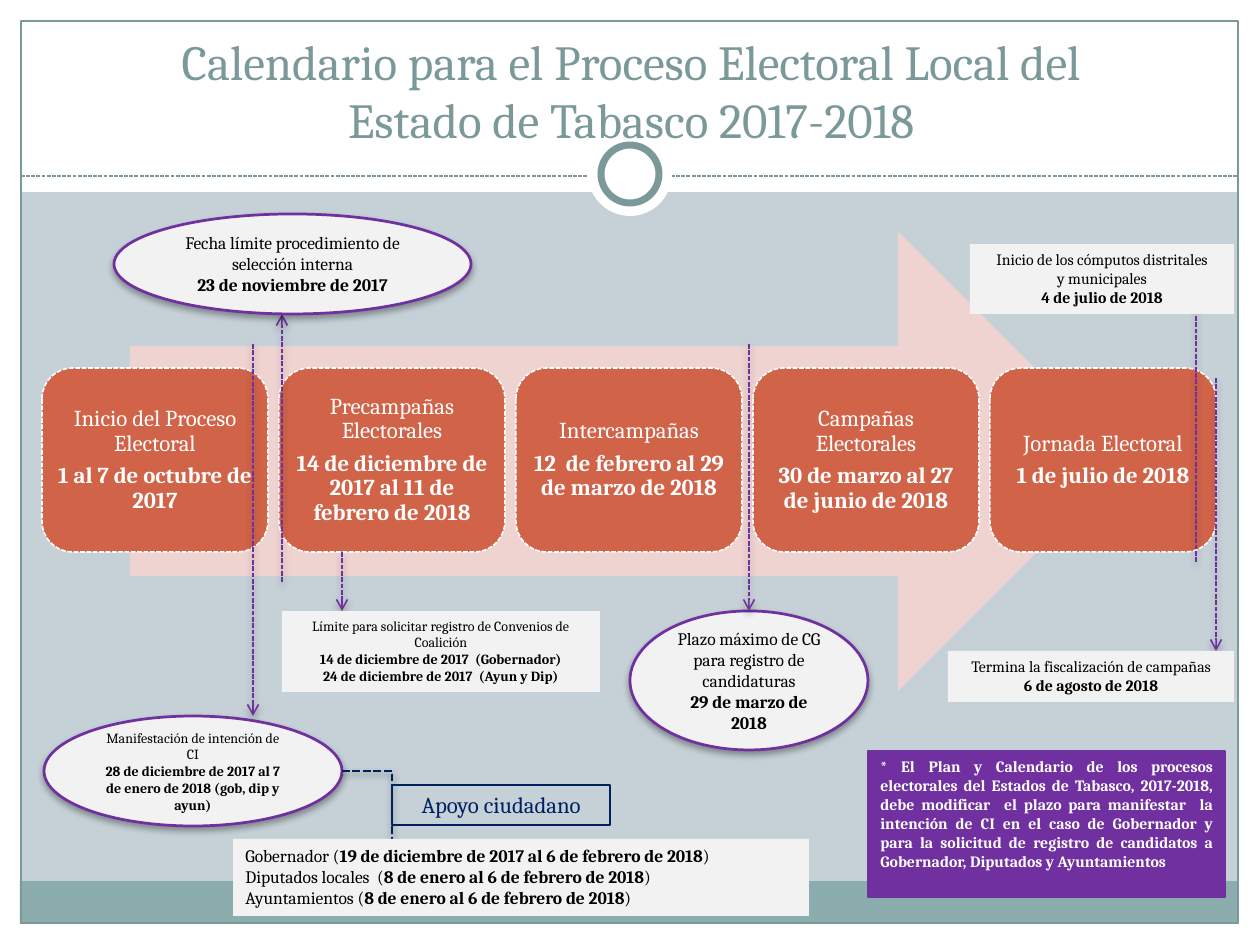
from lxml.etree import SubElement
from pptx import Presentation
from pptx.dml.color import RGBColor
from pptx.enum.dml import MSO_LINE
from pptx.enum.shapes import MSO_CONNECTOR, MSO_SHAPE
from pptx.enum.text import MSO_ANCHOR, MSO_AUTO_SIZE, PP_ALIGN
from pptx.oxml.ns import qn
from pptx.util import Pt

PX = 914400 / 126
COLORS = {
    "back": "C5D1D7", "white": "FFFFFF", "teal": "7C999A", "band": "8CADAE",
    "arrow": "EED3D0", "card": "D16349", "light": "F2F2F2",
    "purple": "7030A0", "navy": "002060", "black": "000000",
}


def px(*values):
    return [round(v * PX) for v in values]


def rgb(name):
    return RGBColor.from_string(COLORS[name])


def put(obj, values):
    for name, value in values.items():
        setattr(obj, name, value)


class Deck:
    font = "Cambria"

    def __init__(self):
        self.prs = Presentation()
        put(self.prs, dict(zip(("slide_width", "slide_height"), px(1260, 945))))
        self.s = self.prs.slides.add_slide(self.prs.slide_layouts[5])
        self.s.background.fill.solid()
        self.s.background.fill.fore_color.rgb = rgb("back")

    def stroke(self, line, color, width, dash=False):
        line.color.rgb = rgb(color)
        line.width = Pt(width)
        if dash:
            line.dash_style = MSO_LINE.SQUARE_DOT

    def effects(self, sp, shadow):
        spPr = sp.element.spPr
        effects = spPr.find(qn("a:effectLst"))
        if effects is None:
            effects = SubElement(spPr, qn("a:effectLst"))
        if shadow:
            outer = SubElement(effects, qn("a:outerShdw"), blurRad=str(Pt(4)),
                               dist=str(Pt(2)), dir="5400000", rotWithShape="0")
            clr = SubElement(outer, qn("a:srgbClr"), val=COLORS["black"])
            SubElement(clr, qn("a:alpha"), val="35000")

    def text(self, sp, paragraphs, size, color="black", align=PP_ALIGN.CENTER,
             anchor=MSO_ANCHOR.TOP, inset=None, para=None):
        tf = sp.text_frame
        put(tf, {"word_wrap": True, "auto_size": MSO_AUTO_SIZE.NONE,
                 "vertical_anchor": anchor})
        if inset is not None:
            for side in ("left", "top", "right", "bottom"):
                setattr(tf, f"margin_{side}", px(inset)[0])
        for i, line in enumerate(paragraphs):
            p = tf.add_paragraph() if i else tf.paragraphs[0]
            put(p, {"alignment": align, **(para or {})})
            for j, part in enumerate(line.split("**")):
                if part:
                    r = p.add_run()
                    r.text = part
                    put(r.font, {"name": self.font, "size": Pt(size), "bold": j % 2 == 1})
                    r.font.color.rgb = rgb(color)

    def title(self, box, text):
        sp = self.s.shapes.title
        put(sp, dict(zip(("left", "top", "width", "height"), px(*box))))
        self.text(sp, [text], 28, "teal", anchor=MSO_ANCHOR.BOTTOM)
        self.s.shapes.element.append(sp.element)

    def shape(self, kind, box, fill=None, line=None, shadow=False):
        sp = self.s.shapes.add_shape(kind, *px(*box))
        sp.shadow.inherit = False
        if fill:
            sp.fill.solid()
            sp.fill.fore_color.rgb = rgb(fill)
        else:
            sp.fill.background()
        if line:
            self.stroke(sp.line, *line)
        else:
            sp.line.fill.background()
        self.effects(sp, shadow)
        return sp

    def rect(self, box, fill=None, line=None):
        return self.shape(MSO_SHAPE.RECTANGLE, box, fill, line)

    def note(self, box, paragraphs, size, align=PP_ALIGN.CENTER):
        self.text(self.rect(box, "light"), paragraphs, size, align=align)

    def bubble(self, box, paragraphs, size):
        sp = self.shape(MSO_SHAPE.OVAL, box, "light", ("purple", 1.57), True)
        self.text(sp, paragraphs, size, anchor=MSO_ANCHOR.MIDDLE)
        return sp

    def card(self, box, name, dates):
        sp = self.shape(MSO_SHAPE.ROUNDED_RECTANGLE, box, "card", ("white", 0.9, True))
        self.text(sp, [name, f"**{dates}**"], 13, "white", anchor=MSO_ANCHOR.MIDDLE,
                  inset=6, para={"line_spacing": 0.9, "space_after": Pt(4.5)})

    def line(self, ends, color, width, kind=MSO_CONNECTOR.STRAIGHT, shadow=True):
        cx = self.s.shapes.add_connector(kind, *px(*ends))
        self.stroke(cx.line, color, width, True)
        self.effects(cx, shadow)
        return cx

    def pointer(self, x, start, end):
        cx = self.line((x, start, x, end), "purple", 0.9)
        SubElement(cx.element.spPr.find(qn("a:ln")), qn("a:tailEnd"), type="arrow")
        return cx

    def elbow(self, ends):
        cx = self.line(ends, "navy", 1.5, MSO_CONNECTOR.ELBOW)
        cx.element.spPr.find(qn("a:prstGeom")).set("prst", "bentConnector2")


def frame(d):
    for box in ((0, 924, 1260, 21), (0, 0, 1260, 192), (0, 0, 21, 945), (1239, 0, 21, 945)):
        d.rect(box, "white")
    d.rect((20, 881, 1218, 43), "band")
    d.rect((21, 21, 1217, 902), line=("teal", 0.75))
    d.line((21, 176, 1239, 176), "teal", 0.75, shadow=False)
    d.shape(MSO_SHAPE.OVAL, (588, 132, 84, 84), "white")
    d.shape(MSO_SHAPE.OVAL, (601, 145, 58, 58), "white", ("teal", 4))


def stages(d):
    d.shape(MSO_SHAPE.RIGHT_ARROW, (130, 231, 998, 460), "arrow")
    cards = (
        ("Inicio del Proceso Electoral", "1 al 7 de octubre de 2017"),
        ("Precampañas Electorales", "14 de diciembre de 2017 al 11 de febrero de 2018"),
        ("Intercampañas", "12  de febrero al 29 de marzo de 2018"),
        ("Campañas Electorales", "30 de marzo al 27 de junio de 2018"),
        ("Jornada Electoral", "1 de julio de 2018"),
    )
    for i, (name, dates) in enumerate(cards):
        d.card((42 + 237 * i, 368, 226, 184), name, dates)


def deadlines(d):
    for x, start, end in ((253, 344, 716), (282, 582, 314), (342, 552, 611),
                          (1216, 378, 651), (1196, 562, 294)):
        d.pointer(x, start, end)
    d.bubble((44, 716, 298, 110), [
        "Manifestación de intención de CI",
        "**28 de diciembre de 2017 al 7 de enero de 2018 (gob, dip y ayun)**"], 8)
    d.bubble((114, 214, 357, 100), [
        "Fecha límite procedimiento de selección interna",
        "**23 de noviembre de 2017**"], 10)
    candidates = d.bubble((630, 611, 238, 139), [
        "Plazo máximo de CG para registro de candidaturas",
        "**29 de marzo de 2018**"], 10)
    d.pointer(749, 344, 611).end_connect(candidates, 0)
    d.note((282, 611, 318, 81), [
        "Límite para solicitar registro de Convenios de Coalición",
        "**14 de diciembre de 2017  (Gobernador)**",
        "**24 de diciembre de 2017  (Ayun y Dip)**"], 8)
    d.note((970, 244, 264, 70), [
        "Inicio de los cómputos distritales", "y municipales", "**4 de julio de 2018**"], 9)
    d.note((948, 651, 286, 51), [
        "Termina la fiscalización de campañas", "**6 de agosto de 2018**"], 9)


def support(d):
    d.elbow((342, 771, 392, 856))
    d.note((233, 839, 576, 77), [
        "Gobernador (**19 de diciembre de 2017 al 6 de febrero de 2018**)",
        "Diputados locales  (**8 de enero al 6 de febrero de 2018**)",
        "Ayuntamientos (**8 de enero al 6 de febrero de 2018**)"], 10, PP_ALIGN.LEFT)
    d.text(d.rect((392, 785, 218, 40), line=("navy", 0.75)), ["Apoyo ciudadano"], 13, "navy")
    d.text(d.rect((868, 751, 357, 146), "purple", ("purple", 0.75)), [
        "*** El Plan y Calendario de los procesos electorales del Estados de Tabasco, "
        "2017-2018, debe modificar  el plazo para manifestar  la intención de CI en el caso "
        "de Gobernador y para la solicitud de registro de candidatos a Gobernador, "
        "Diputados y Ayuntamientos**"], 9, "white", PP_ALIGN.JUSTIFY)


def main():
    d = Deck()
    frame(d)
    d.title((105, 50, 1052, 105),
            "Calendario para el Proceso Electoral Local del Estado de Tabasco 2017-2018")
    stages(d)
    deadlines(d)
    support(d)
    d.prs.save("out.pptx")


if __name__ == "__main__":
    main()
